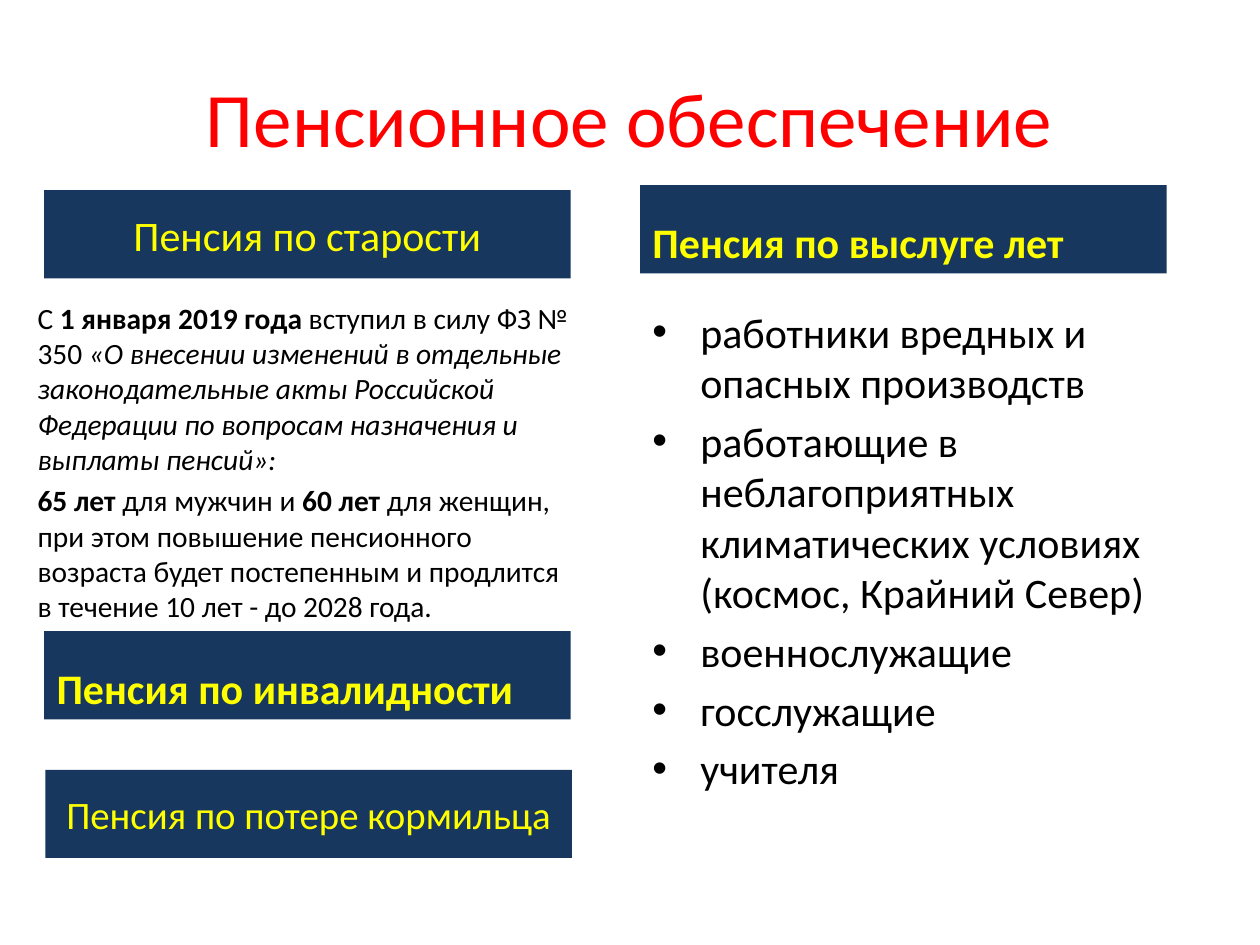
from lxml.etree import SubElement
from pptx import Presentation
from pptx.dml.color import RGBColor
from pptx.enum.shapes import MSO_SHAPE
from pptx.enum.text import MSO_ANCHOR, PP_ALIGN
from pptx.oxml.ns import qn
from pptx.util import Inches, Pt

RED = RGBColor(0xFF, 0x00, 0x00)
NAVY = RGBColor(0x17, 0x37, 0x5E)
YELLOW = RGBColor(0xFF, 0xFF, 0x00)
BLACK = RGBColor(0x00, 0x00, 0x00)
FONT = "Calibri"
BANNER_WIDTH, BANNER_HEIGHT = 4.18, 0.7
BULLET_INDENT = Inches(0.38)

OLD_AGE_LAW = [
    [("С ", ""), ("1 января 2019 года ", "b"), ("вступил в силу ФЗ № 350 ", ""),
     ("«О внесении изменений в отдельные законодательные акты Российской "
      "Федерации по вопросам назначения и выплаты пенсий»:", "i")],
    [("65 лет ", "b"), ("для мужчин и ", ""), ("60 лет ", "b"),
     ("для женщин, при этом повышение пенсионного возраста будет постепенным "
      "и продлится в течение 10 лет - до 2028 года.", "")],
]
SERVICE_GROUPS = [
    "работники вредных и опасных производств",
    "работающие в неблагоприятных климатических условиях (космос, Крайний Север)",
    "военнослужащие",
    "госслужащие",
    "учителя",
]


def add_bullet(paragraph):
    properties = paragraph._p.get_or_add_pPr()
    properties.set("marL", str(BULLET_INDENT))
    properties.set("indent", str(-BULLET_INDENT))
    SubElement(properties, qn("a:buFont")).set("typeface", "Arial")
    SubElement(properties, qn("a:buChar")).set("char", "•")


def write_text(shape, paragraphs, size, color, align=PP_ALIGN.LEFT,
               anchor=MSO_ANCHOR.TOP, spacing=0.2, bullets=False):
    """Fill a shape with paragraphs, each a list of (text, style); style holds "b" or "i".

    spacing is the gap before a paragraph as a share of the text size.
    """
    frame = shape.text_frame
    frame.word_wrap = True
    frame.vertical_anchor = anchor
    for index, runs in enumerate(paragraphs):
        paragraph = frame.add_paragraph() if index else frame.paragraphs[0]
        paragraph.alignment = align
        paragraph.space_before = Pt(round(size * spacing, 1))
        if bullets:
            add_bullet(paragraph)
        for text, style in runs:
            run = paragraph.add_run()
            run.text = text
            run.font.name = FONT
            run.font.size = Pt(size)
            run.font.color.rgb = color
            run.font.bold = "b" in style
            run.font.italic = "i" in style


def add_text(slide, left, top, width, height, paragraphs, **text_format):
    box = slide.shapes.add_textbox(
        Inches(left), Inches(top), Inches(width), Inches(height))
    write_text(box, paragraphs, **text_format)


def add_banner(slide, left, top, label, size=24, heading=False):
    """Add a navy bar; a heading is bold and sits at the lower left."""
    banner = slide.shapes.add_shape(
        MSO_SHAPE.RECTANGLE, Inches(left), Inches(top),
        Inches(BANNER_WIDTH), Inches(BANNER_HEIGHT))
    banner.shadow.inherit = False
    banner.fill.solid()
    banner.fill.fore_color.rgb = NAVY
    banner.line.fill.background()
    write_text(banner, [[(label, "b" if heading else "")]], size=size, color=YELLOW,
               align=PP_ALIGN.LEFT if heading else PP_ALIGN.CENTER,
               anchor=MSO_ANCHOR.BOTTOM if heading else MSO_ANCHOR.MIDDLE)


def add_left_column(slide, left, top):
    add_banner(slide, left, top, "Пенсия по старости")
    add_text(slide, left - 0.15, top + 0.82, 4.49, 2.6, OLD_AGE_LAW,
             size=16.8, color=BLACK)
    add_banner(slide, left, top + 3.5, "Пенсия по инвалидности", heading=True)
    add_banner(slide, left + 0.01, top + 4.6, "Пенсия по потере кормильца", size=22.2)


def add_right_column(slide, left, top):
    add_banner(slide, left, top, "Пенсия по выслуге лет", heading=True)
    add_text(slide, left, top + 0.91, 4.42, 4.32,
             [[(group, "")] for group in SERVICE_GROUPS],
             size=24, color=BLACK, bullets=True)


def main():
    deck = Presentation()
    deck.slide_width, deck.slide_height = Inches(10), Inches(7.5)
    slide = deck.slides.add_slide(deck.slide_layouts[6])
    add_text(slide, 0.5, 0.3, 9, 1.25, [[("Пенсионное обеспечение", "")]],
             size=44, color=RED, align=PP_ALIGN.CENTER,
             anchor=MSO_ANCHOR.MIDDLE, spacing=0)
    add_left_column(slide, 0.35, 1.51)
    add_right_column(slide, 5.08, 1.47)
    deck.save("out.pptx")


if __name__ == "__main__":
    main()
